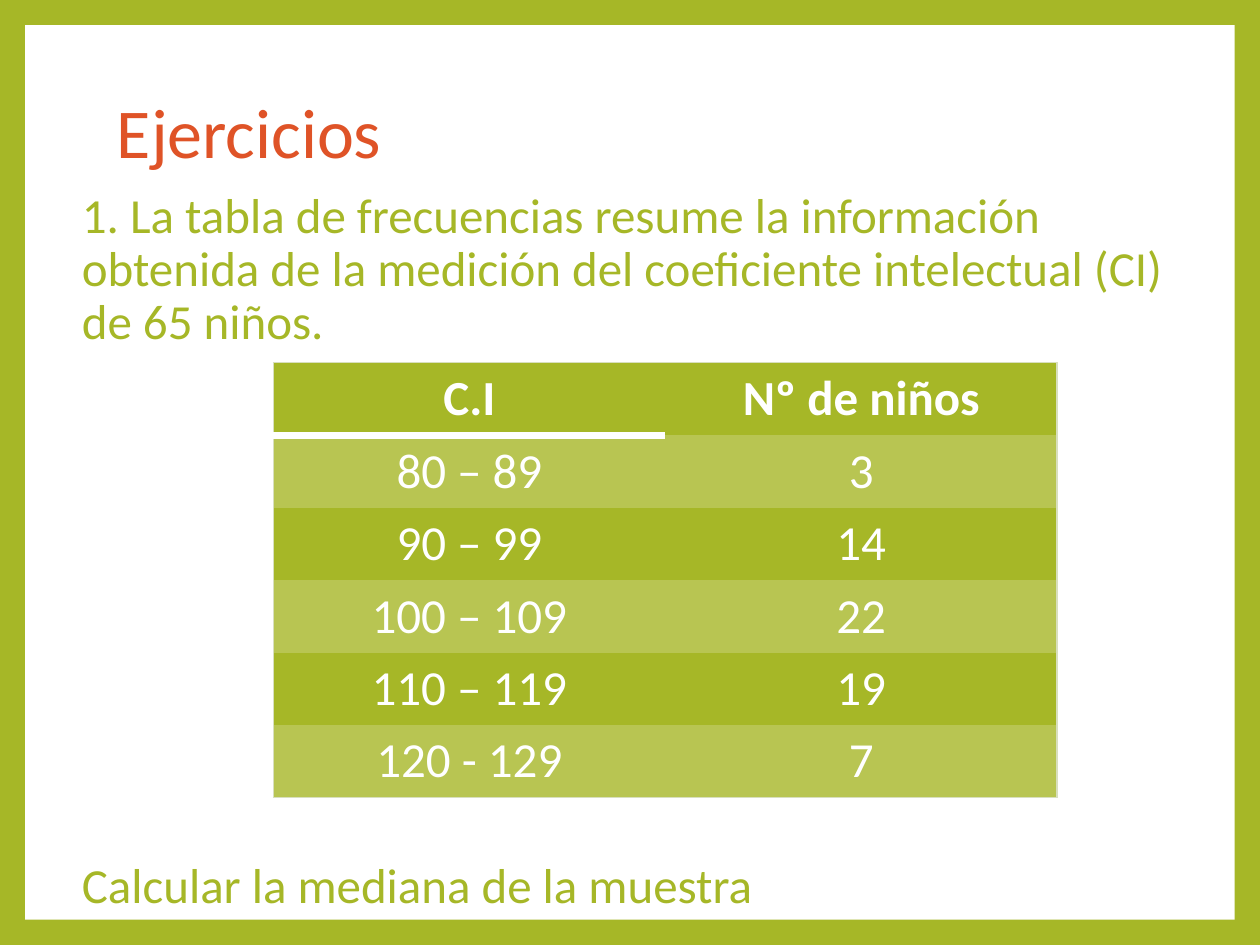
from lxml import etree
from pptx import Presentation
from pptx.dml.color import RGBColor
from pptx.enum.shapes import MSO_SHAPE
from pptx.enum.text import MSO_ANCHOR, PP_ALIGN
from pptx.oxml.ns import qn
from pptx.util import Inches, Pt

RECTANGLE = MSO_SHAPE.RECTANGLE
MIDDLE = MSO_ANCHOR.MIDDLE
CENTER = PP_ALIGN.CENTER

COLORS = {
    "green": "A6B727",
    "light green": "B8C552",
    "orange": "DF5327",
    "white": "FFFFFF",
    "outline": "D8DFBE",
}


def style(paragraph, size, color, bold=False):
    paragraph.font.name = "Calibri"
    paragraph.font.size = Pt(size)
    paragraph.font.bold = bold
    paragraph.font.color.rgb = RGBColor.from_string(COLORS[color])


def set_borders(cell, borders):
    """Borders map a side tag to (color, width in points), None for no line."""
    properties = cell._tc.get_or_add_tcPr()
    position = 0
    for side in ("lnL", "lnR", "lnT", "lnB"):
        line = etree.Element(qn("a:" + side))
        if side in borders:
            color, width = borders[side]
            line.set("w", str(Pt(width)))
            fill = etree.SubElement(line, qn("a:solidFill"))
            etree.SubElement(fill, qn("a:srgbClr"), val=COLORS[color])
        else:
            etree.SubElement(line, qn("a:noFill"))
        properties.insert(position, line)
        position += 1


prs = Presentation()
prs.slide_width = Inches(10)
prs.slide_height = Inches(7.5)
slide = prs.slides.add_slide(prs.slide_layouts[6])

# Green background with a white page on it
slide.background.fill.solid()
slide.background.fill.fore_color.rgb = RGBColor.from_string(COLORS["green"])
page = slide.shapes.add_shape(RECTANGLE, Inches(0.2), Inches(0.2), Inches(9.6), Inches(7.1))
page.shadow.inherit = False
page.fill.solid()
page.fill.fore_color.rgb = RGBColor.from_string(COLORS["white"])
page.line.fill.background()

# Title
title = slide.shapes.add_textbox(Inches(0.83), Inches(0.34), Inches(8.1), Inches(1.48)).text_frame
title.word_wrap = True
title.vertical_anchor = MIDDLE
title.text = "Ejercicios"
title.paragraphs[0].line_spacing = 0.9
style(title.paragraphs[0], 40, "orange")

# Exercise: statement above the table, task below it
exercise = slide.shapes.add_textbox(Inches(0.43), Inches(1.47), Inches(9.29), Inches(5.2)).text_frame
exercise.word_wrap = True
exercise.margin_left = Inches(0.22)
exercise.text = (
    "1. La tabla de frecuencias resume la información obtenida de la medición "
    "del coeficiente intelectual (CI) de 65 niños.\n"
    "Calcular la mediana de la muestra"
)
for paragraph in exercise.paragraphs:
    paragraph.line_spacing = 0.9
    style(paragraph, 28, "green")
exercise.paragraphs[1].space_before = Pt(292)

# Frequency table
frequencies = [
    ("C.I", "Nº de niños"),
    ("80 – 89", "3"),
    ("90 – 99", "14"),
    ("100 – 109", "22"),
    ("110 – 119", "19"),
    ("120 - 129", "7"),
]
last_row = len(frequencies) - 1
table = slide.shapes.add_table(
    len(frequencies), 2, Inches(2.17), Inches(2.88), Inches(6.22), Inches(3.45)
).table
outline = ("outline", 0.79)
for r, values in enumerate(frequencies):
    for c, value in enumerate(values):
        cell = table.cell(r, c)
        cell.text = value
        cell.text_frame.paragraphs[0].alignment = CENTER
        style(cell.text_frame.paragraphs[0], 28, "white", bold=r == 0)
        cell.fill.solid()
        band = "light green" if r % 2 else "green"
        cell.fill.fore_color.rgb = RGBColor.from_string(COLORS[band])
        borders = {"lnL" if c == 0 else "lnR": outline}
        if r == 0:
            borders["lnT"] = outline
        if r == last_row:
            borders["lnB"] = outline
        # White rule under the first heading
        if c == 0 and r < 2:
            borders["lnB" if r == 0 else "lnT"] = ("white", 4.25)
        set_borders(cell, borders)

prs.save("out.pptx")
